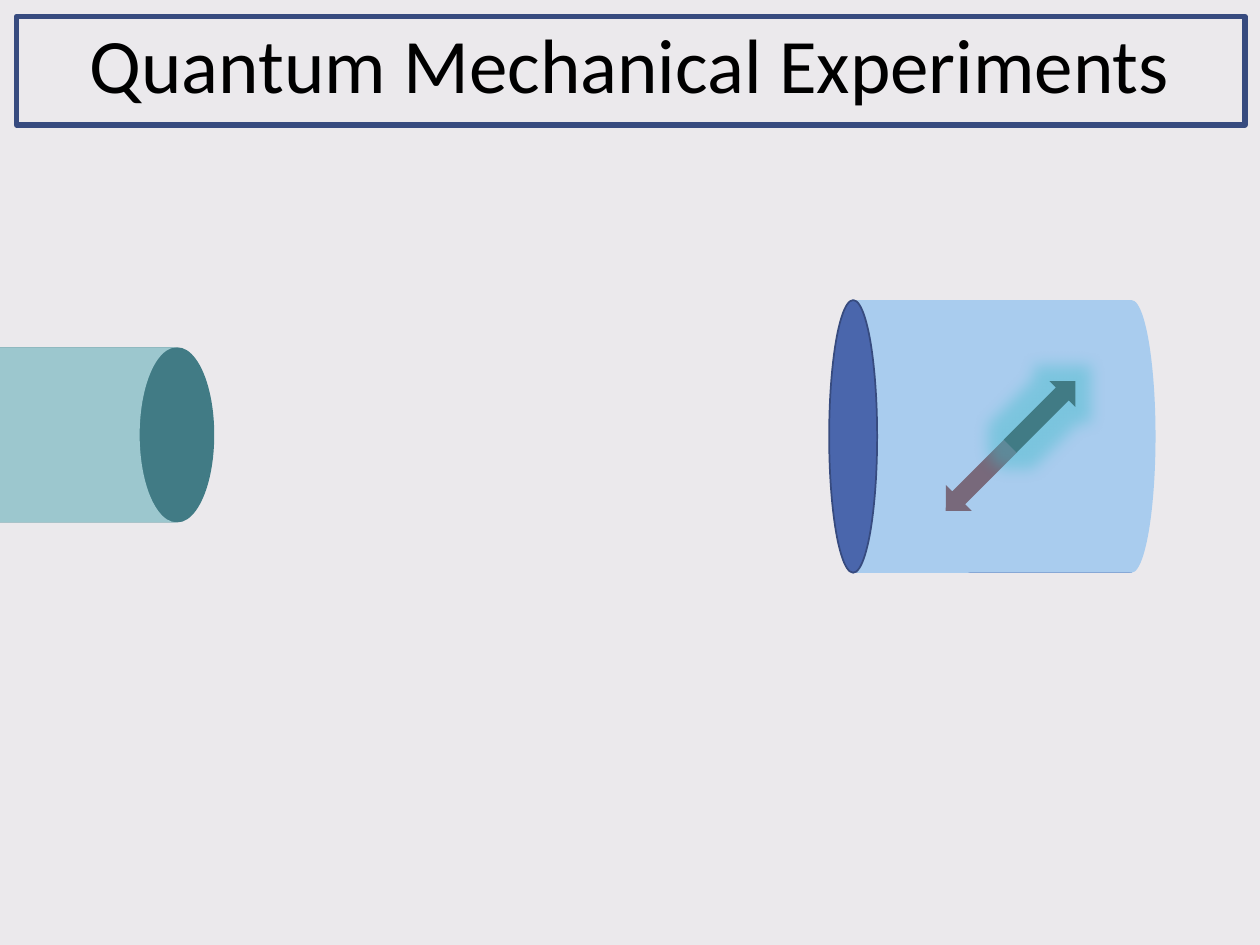
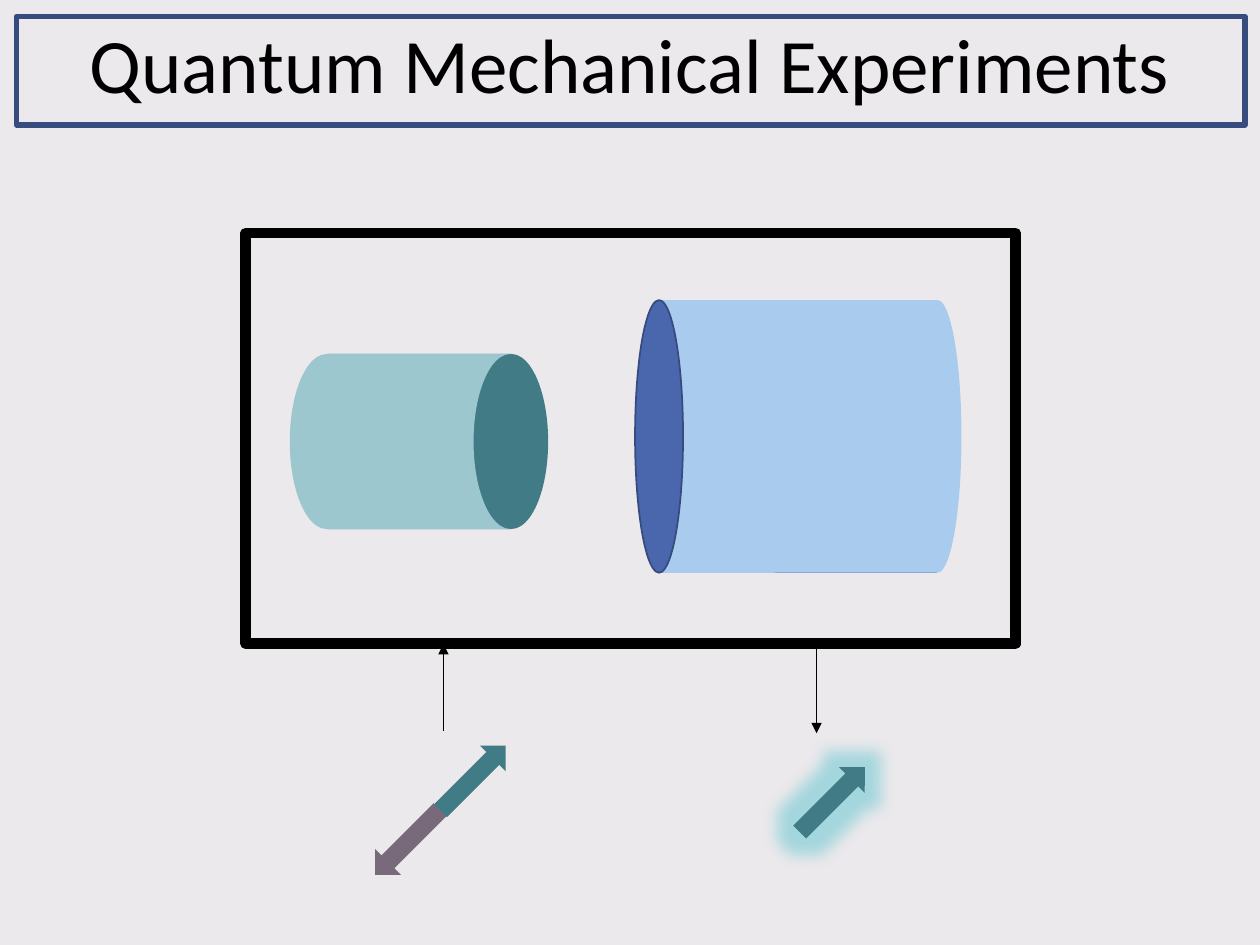
from lxml import etree
from pptx import Presentation
from pptx.dml.color import RGBColor
from pptx.enum import shapes, text
from pptx.oxml import ns
from pptx.util import Pt

BACKGROUND = "EBE9EC"
BLACK = "000000"
NAVY = "374B7F"
BLUE = "4A66AC"
PALE_BLUE = "A9CCEE"
TEAL = "417B85"
PALE_TEAL = "9CC7CE"
MAUVE = "78697B"
GLOW = "38BBC8"

SHAPE = shapes.MSO_SHAPE
color = RGBColor.from_string


def add_part(page, kind, left, top, width, height, fill=None, line=None, weight=1, turn=0):
    part = page.shapes.add_shape(kind, Pt(left), Pt(top), Pt(width), Pt(height))
    part.shadow.inherit = False
    part.rotation = turn
    if fill:
        part.fill.solid()
        part.fill.fore_color.rgb = color(fill)
    else:
        part.fill.background()
    if line:
        part.line.color.rgb = color(line)
        part.line.width = Pt(weight)
    else:
        part.line.fill.background()
    return part


def add_line(page, start_x, start_y, end_x, end_y, line, arrow=False):
    rule = page.shapes.add_connector(
        shapes.MSO_CONNECTOR.STRAIGHT, Pt(start_x), Pt(start_y), Pt(end_x), Pt(end_y))
    rule.line.color.rgb = color(line)
    rule.line.width = Pt(0.5)
    if arrow:
        etree.SubElement(rule.line._get_or_add_ln(), ns.qn("a:tailEnd"), type="triangle")
    etree.SubElement(rule._element.spPr, ns.qn("a:effectLst"))


deck = Presentation()
deck.slide_width, deck.slide_height = Pt(720), Pt(540)

# Emitter and detector positions; spin arrows as (left, top, fill, turn, glows)
experiments = [
    {"emitter": (-25.2, 198.5), "detector": 473.8, "boxed": False,
     "spins": [(548.6, 247, MAUVE, 45, False), (585.4, 210, TEAL, 225, True)]},
    {"emitter": (165.6, 202.3), "detector": 362.9, "boxed": True,
     "spins": [(222.5, 455, MAUVE, 45, False), (259.9, 418.3, TEAL, 225, False),
               (465.1, 430.6, TEAL, 225, True)]},
]

for experiment in experiments:
    page = deck.slides.add_slide(deck.slide_layouts[6])
    page.background.fill.solid()
    page.background.fill.fore_color.rgb = color(BACKGROUND)

    # Title and its frame
    box = page.shapes.add_textbox(0, Pt(-13), Pt(720), Pt(104.4))
    frame = box.text_frame
    frame.word_wrap = True
    frame.vertical_anchor = text.MSO_ANCHOR.MIDDLE
    para = frame.paragraphs[0]
    para.text = "Quantum Mechanical Experiments"
    para.alignment = text.PP_ALIGN.CENTER
    para.line_spacing = 0.9
    span = para.runs[0]
    span.font.name = "Calibri"
    span.font.size = Pt(44)
    span.font.color.rgb = color(BLACK)
    add_part(page, SHAPE.RECTANGLE, 9.4, 9.4, 702, 62, line=NAVY, weight=3)

    # Emitter: dark mouth behind the pale body
    left, top = experiment["emitter"]
    add_part(page, SHAPE.FLOWCHART_STORED_DATA, left + 21.6, top, 126, 100, TEAL, turn=180)
    add_part(page, SHAPE.FLOWCHART_STORED_DATA, left, top, 126, 100, PALE_TEAL)

    # Detector: outlined barrel with a blue mouth
    left, top, height = experiment["detector"], 171.5, 155.8
    for edge in (top, top + height):
        add_line(page, left + 13.7, edge, left + 172.8, edge, BLUE)
    add_part(page, SHAPE.OVAL, left + 159.1, top, 27.4, height, PALE_BLUE)
    add_part(page, SHAPE.RECTANGLE, left + 13.7, top, 159.1, height, PALE_BLUE)
    add_part(page, SHAPE.OVAL, left, top, 27.4, height, BLUE, NAVY)
    add_part(page, SHAPE.FLOWCHART_STORED_DATA, left + 15.8, top, 76.3, height,
             PALE_BLUE, turn=180)

    # Closed box with the arrows going in and out
    if experiment["boxed"]:
        add_part(page, SHAPE.RECTANGLE, 140.4, 133.2, 440, 234.7, line=BLACK, weight=6)
        add_line(page, 253.4, 417.6, 253.4, 368, BLACK, arrow=True)
        add_line(page, 466.6, 369.4, 466.6, 419, BLACK, arrow=True)

    # Spin arrows
    for left, top, fill, turn, glows in experiment["spins"]:
        spin = add_part(page, SHAPE.DOWN_ARROW, left, top, 20.9, 52.6, fill, turn=turn)
        if glows:
            effects = spin._element.spPr.find(ns.qn("a:effectLst"))
            glow = etree.SubElement(effects, ns.qn("a:glow"), rad=str(Pt(18)))
            tint = etree.SubElement(glow, ns.qn("a:srgbClr"), val=GLOW)
            etree.SubElement(tint, ns.qn("a:alpha"), val="40000")

deck.save("out.pptx")
